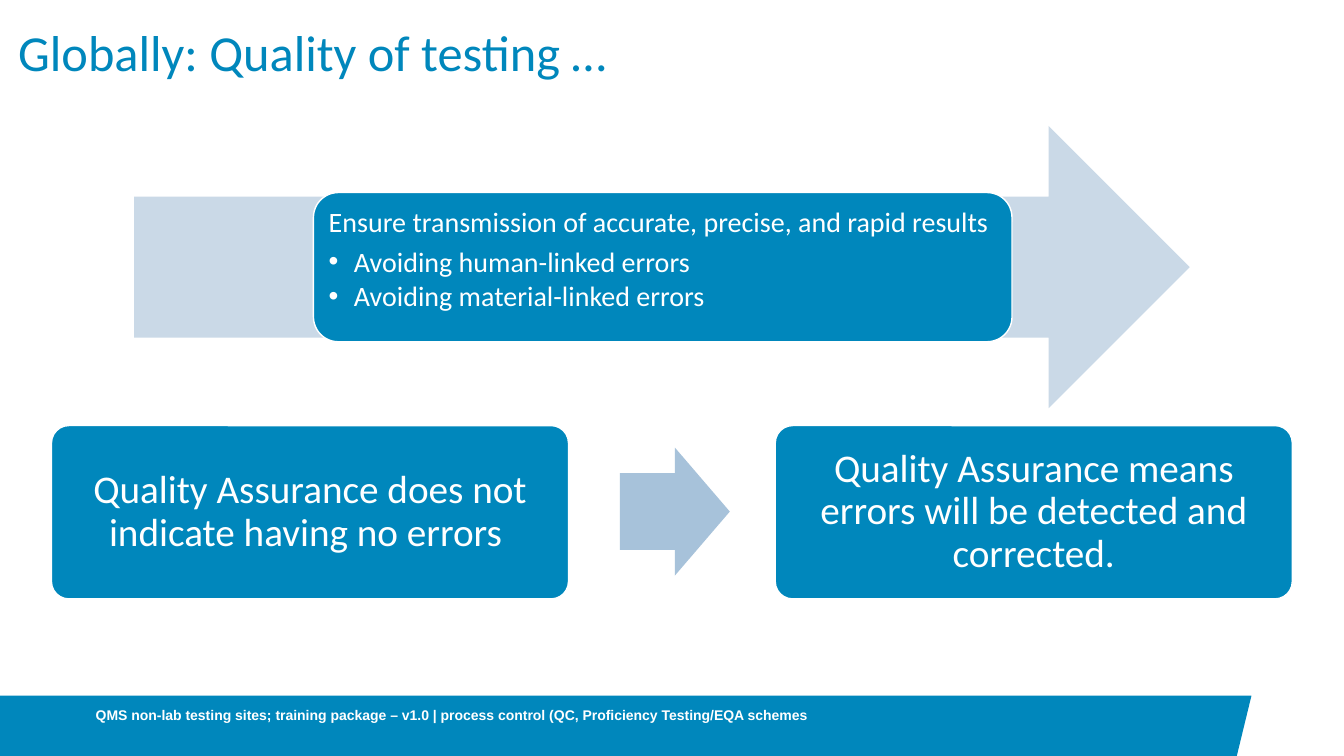
from dataclasses import dataclass

from lxml import etree
from pptx import Presentation
from pptx import util as u
from pptx.dml.color import RGBColor
from pptx.enum import shapes, text
from pptx.oxml.ns import qn


@dataclass(frozen=True)
class Theme:
    blue: str = "0087BC"
    pale: str = "CAD9E7"
    soft: str = "A7C2DA"
    white: str = "FFFFFF"
    body_font: str = "Calibri"
    footer_font: str = "Arial"
    title_size: int = 36
    card_size: int = 28
    banner_size: int = 20
    footer_size: int = 10


class SlideBuilder:
    def __init__(self, slide, theme):
        self.slide = slide
        self.theme = theme

    def paint(self, shape, fill, line=None):
        shape.shadow.inherit = False
        shape.fill.solid()
        shape.fill.fore_color.rgb = RGBColor.from_string(fill)
        if line:
            shape.line.color.rgb = RGBColor.from_string(line)
            shape.line.width = u.Pt(1)
        else:
            shape.line.fill.background()

    def preset(self, kind, box, adjustments, fill, line=None):
        shape = self.slide.shapes.add_shape(kind, *map(u.Pt, box))
        for index, value in enumerate(adjustments):
            shape.adjustments[index] = value
        self.paint(shape, fill, line)
        return shape

    def arrow(self, box, shaft, fill):
        return self.preset(shapes.MSO_SHAPE.RIGHT_ARROW, box, (shaft, 0.5), fill)

    def panel(self, box, corner):
        kind = shapes.MSO_SHAPE.ROUNDED_RECTANGLE
        return self.preset(kind, box, (corner,), self.theme.blue, self.theme.white)

    def polygon(self, points, fill):
        corners = [(u.Pt(x), u.Pt(y)) for x, y in points]
        builder = self.slide.shapes.build_freeform(*corners[0])
        builder.add_line_segments(corners[1:], close=True)
        self.paint(builder.convert_to_shape(), fill)

    def frame(self, shape, inset, anchor):
        frame = shape.text_frame
        frame.word_wrap = True
        frame.vertical_anchor = anchor
        frame.margin_left = frame.margin_right = u.Pt(inset)
        frame.margin_top = frame.margin_bottom = u.Pt(inset)
        return frame

    def add_words(self, paragraph, words, size, color, font=None, bold=False,
                  align=text.PP_ALIGN.LEFT, spacing=0.9):
        paragraph.alignment = align
        paragraph.line_spacing = spacing
        run = paragraph.add_run()
        run.text = words
        run.font.name = font or self.theme.body_font
        run.font.size = u.Pt(size)
        run.font.bold = bold
        run.font.color.rgb = RGBColor.from_string(color)

    def label(self, box, words, size, color, anchor, **style):
        shape = self.slide.shapes.add_textbox(*map(u.Pt, box))
        frame = self.frame(shape, 0, anchor)
        self.add_words(frame.paragraphs[0], words, size, color, **style)

    def bullet(self, paragraph, indent):
        properties = paragraph._p.get_or_add_pPr()
        properties.set("marL", str(u.Pt(indent)))
        properties.set("indent", str(-u.Pt(indent)))
        etree.SubElement(properties, qn("a:buFont")).set("typeface", self.theme.footer_font)
        etree.SubElement(properties, qn("a:buChar")).set("char", "•")

    def card(self, box, words):
        frame = self.frame(self.panel(box, 0.1), 8.64, text.MSO_ANCHOR.MIDDLE)
        self.add_words(frame.paragraphs[0], words, self.theme.card_size,
                       self.theme.white, align=text.PP_ALIGN.CENTER)

    def banner(self, box, heading, bullets):
        frame = self.frame(self.panel(box, 0.167), 5.76, text.MSO_ANCHOR.TOP)
        size, color = self.theme.banner_size, self.theme.white
        self.add_words(frame.paragraphs[0], heading, size, color)
        for words, gap in bullets:
            paragraph = frame.add_paragraph()
            self.add_words(paragraph, words, size, color)
            paragraph.space_before = u.Pt(gap)
            self.bullet(paragraph, 18)


def main():
    presentation = Presentation()
    presentation.slide_width = u.Pt(960)
    presentation.slide_height = u.Pt(540)
    theme = Theme()
    page = SlideBuilder(presentation.slides.add_slide(presentation.slide_layouts[6]), theme)

    page.polygon([(0, 496.8), (894, 496.8), (883, 542), (0, 542)], theme.blue)
    page.label((13, 3.6, 828, 55.4), "Globally: Quality of testing …",
               theme.title_size, theme.blue, text.MSO_ANCHOR.BOTTOM)

    page.arrow((95.8, 90, 754, 201.6), 0.5, theme.pale)
    page.banner(
        (223.9, 137.5, 499, 106.6),
        "Ensure transmission of accurate, precise, and rapid results",
        [("Avoiding human-linked errors", 7), ("Avoiding material-linked errors", 3)],
    )

    cards = [
        "Quality Assurance does not indicate having no errors ",
        "Quality Assurance means errors will be detected and corrected.",
    ]
    for index, words in enumerate(cards):
        page.card((36.8 + index * 517, 304, 369.3, 123.8), words)
    page.arrow((442.8, 319.7, 78.5, 91.5), 0.6, theme.soft)

    page.label(
        (68.4, 496.8, 576, 28),
        "QMS non-lab testing sites; training package – v1.0 | "
        "process control (QC, Proficiency Testing/EQA schemes",
        theme.footer_size, theme.white, text.MSO_ANCHOR.MIDDLE,
        font=theme.footer_font, bold=True, spacing=1.0,
    )
    presentation.save("out.pptx")


if __name__ == "__main__":
    main()
